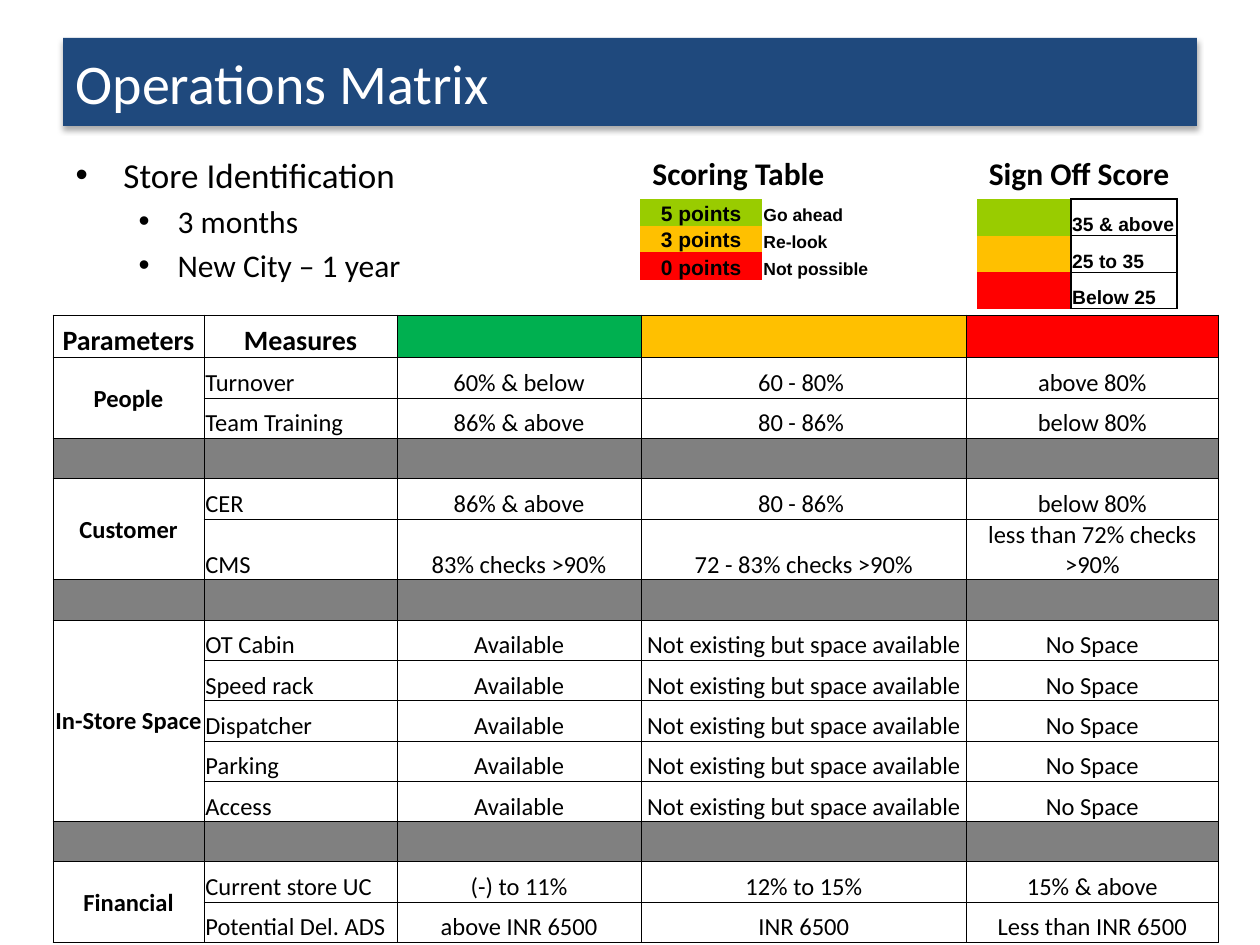
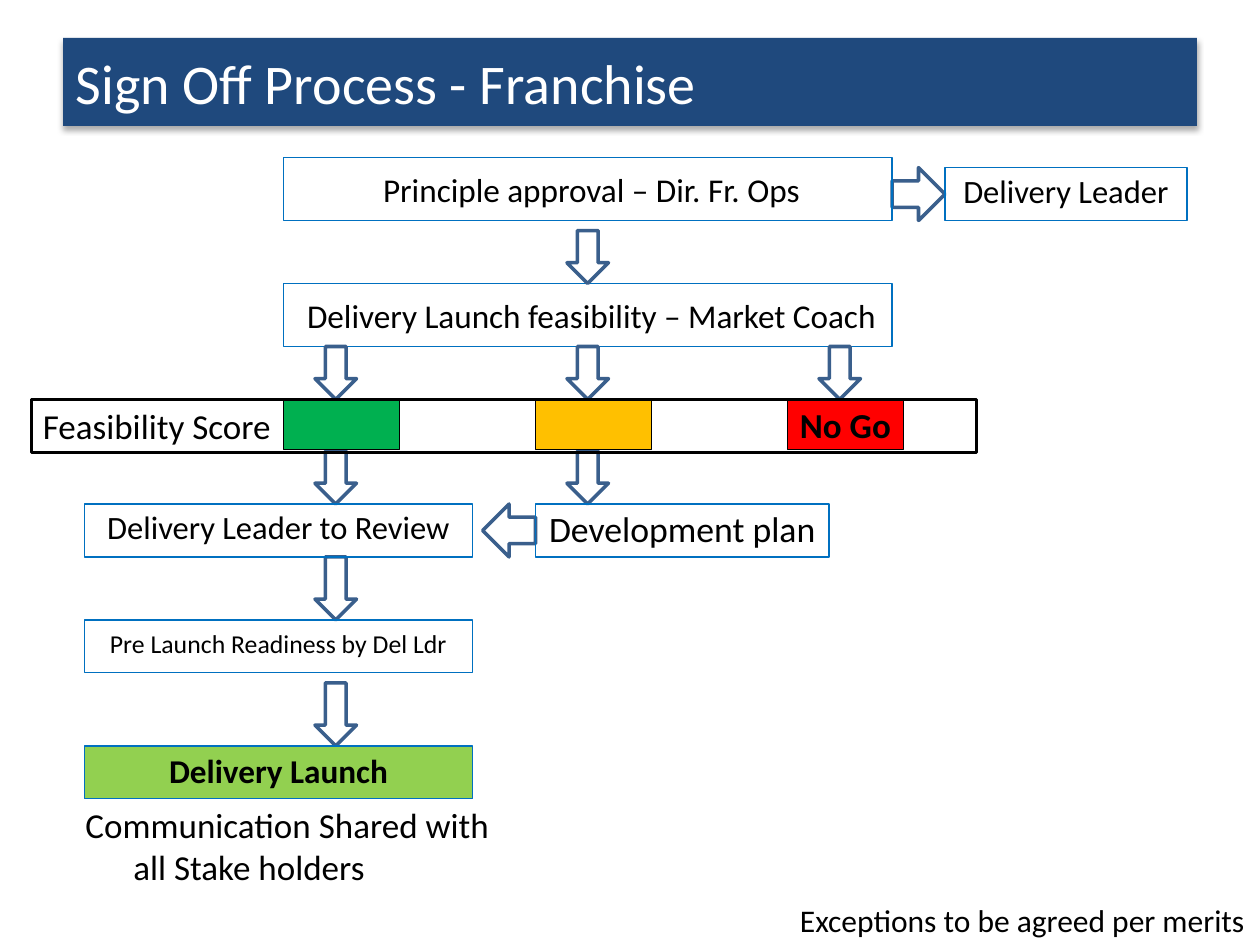
from lxml.etree import SubElement
from pptx import Presentation
from pptx.dml.color import RGBColor
from pptx.enum.shapes import MSO_SHAPE as Preset
from pptx.enum.text import MSO_ANCHOR as Anchor, MSO_AUTO_SIZE as AutoSize, PP_ALIGN as Align
from pptx.oxml.ns import qn
from pptx.util import Inches, Pt

NAVY, BLUE, STEEL = "1F497D", "0070C0", "3A5F8C"
GREEN, AMBER, RED = "00B050", "FFC000", "FF0000"
LIME, LIGHT_GREEN, GRAY = "99CC00", "92D050", "808080"
BLACK, WHITE = "000000", "FFFFFF"
NO_STYLE = "{2D5ABB26-0587-4C30-8999-92F81FD0307C}"


def paint(target, fill=None, line=None, width=0.75, borders=None):
    for side, weight in (borders or {}).items():
        border = SubElement(target._tc.get_or_add_tcPr(), qn(f"a:ln{side}"), w=str(Pt(weight)))
        SubElement(SubElement(border, qn("a:solidFill")), qn("a:srgbClr"), val=BLACK)
    if fill:
        target.fill.solid()
        target.fill.fore_color.rgb = RGBColor.from_string(fill)
    else:
        target.fill.background()
    if line:
        target.line.color.rgb = RGBColor.from_string(line)
        target.line.width = Pt(width)


def write(frame, text, size=18, font="Calibri", color=BLACK, bold=False, align=Align.LEFT,
          spacing=None, before=0, margin=0, hanging=0, level=0, bullet=None):
    paragraph = frame.add_paragraph() if frame.text else frame.paragraphs[0]
    paragraph.alignment, paragraph.level = align, level
    paragraph.space_before = Pt(before)
    if spacing:
        paragraph.line_spacing = spacing
    properties = paragraph._p.get_or_add_pPr()
    properties.set("marL", str(Inches(margin)))
    properties.set("indent", str(-Inches(hanging)))
    if bullet:
        SubElement(properties, qn("a:buChar"), char=bullet)
    else:
        SubElement(properties, qn("a:buNone"))
    run = paragraph.add_run()
    run.text = text
    run.font.size, run.font.name, run.font.bold = Pt(size), font, bold
    run.font.color.rgb = RGBColor.from_string(color)


presentation = Presentation()
presentation.slide_width, presentation.slide_height = Inches(10), Inches(7.5)

slides = []
for heading in ("Operations Matrix", "Sign Off Process - Franchise"):
    slide = presentation.slides.add_slide(presentation.slide_layouts[1])
    title = slide.shapes.title
    title.left, title.top, title.width, title.height = map(Inches, (0.5, 0.3, 9, 0.7))
    paint(title, NAVY)
    effects = SubElement(title._element.spPr, qn("a:effectLst"))
    shadow = SubElement(effects, qn("a:outerShdw"), blurRad=str(Pt(3.5)), dist=str(Pt(2.2)),
                        dir="5400000", rotWithShape="0")
    shadow_color = SubElement(shadow, qn("a:srgbClr"), val=BLACK)
    SubElement(shadow_color, qn("a:alpha"), val="32000")
    title.text_frame.auto_size = AutoSize.NONE
    title.text_frame.vertical_anchor = Anchor.MIDDLE
    write(title.text_frame, heading, size=32, color=WHITE)
    slides.append(slide)
matrix_slide, process_slide = slides

body = matrix_slide.placeholders[1]
body.left, body.top, body.width, body.height = map(Inches, (0.5, 1.17, 9, 1.58))
body.text_frame.auto_size = AutoSize.NONE
write(body.text_frame, "Store Identification", size=20, before=4, margin=0.38, hanging=0.38, bullet="•")
for period in ("3 months", "New City – 1 year"):
    write(body.text_frame, period, before=3.6, margin=0.81, hanging=0.31, level=1, bullet="•")

separator = ("",) * 5
space_levels = ("Available", "Not existing but space available", "No Space")
matrix_rows = [
    ("Parameters", "Measures", "", "", ""),
    ("People", "Turnover", "60% & below", "60 - 80% ", "above 80%"),
    ("", "Team Training", "86% & above", "80 - 86% ", "below 80%"),
    separator,
    ("Customer", "CER", "86% & above", "80 - 86% ", "below 80%"),
    ("", "CMS", "83% checks >90%", "72 - 83% checks >90%", "less than 72% checks >90%"),
    separator,
    ("In-Store Space", "OT Cabin", *space_levels),
    *[("", measure, *space_levels) for measure in ("Speed rack", "Dispatcher", "Parking", "Access")],
    separator,
    ("Financial", "Current store UC", "(-) to 11%", "12% to 15%", "15% & above"),
    ("", "Potential Del. ADS", "above INR 6500", "INR 6500", "Less than INR 6500"),
]
scoring_rows = [("5 points", "Go ahead"), ("3 points", "Re-look"), ("0 points", "Not possible")]
sign_off_rows = [("", "35 & above"), ("", "25 to 35"), ("", "Below 25")]
small_heights = [0.21, 0.21, 0.22]

tables = []
for left, top, widths, heights, rows in (
    (0.42, 2.5, [1.2, 1.53, 1.94, 2.58, 2], [0.34] + [0.32] * 14, matrix_rows),
    (5.08, 1.58, [0.97, 1.03], small_heights, scoring_rows),
    (7.75, 1.58, [0.75, 0.84], small_heights, sign_off_rows),
):
    table = matrix_slide.shapes.add_table(
        len(rows), len(widths), Inches(left), Inches(top),
        Inches(sum(widths)), Inches(sum(heights))).table
    table.first_row = table.horz_banding = False
    table._tbl.tblPr.find(qn("a:tableStyleId")).text = NO_STYLE
    for column, width in zip(table.columns, widths):
        column.width = Inches(width)
    for row, height in zip(table.rows, heights):
        row.height = Inches(height)
    for cell in table.iter_cells():
        cell.margin_left = cell.margin_right = cell.margin_top = Inches(0.01)
        cell.margin_bottom = 0
        cell.vertical_anchor = Anchor.BOTTOM
    tables.append(table)
matrix, scoring, sign_off = tables

for first, last in ((1, 2), (4, 5), (7, 11), (13, 14)):
    matrix.cell(first, 0).merge(matrix.cell(last, 0))
header_fills = (None, None, GREEN, AMBER, RED)
for r, row in enumerate(matrix_rows):
    for c, text in enumerate(row):
        cell = matrix.cell(r, c)
        fill = header_fills[c] if r == 0 else GRAY if row == separator else None
        paint(cell, fill, borders=dict.fromkeys("LRTB", 0.5))
        if r and c == 0:
            cell.vertical_anchor = Anchor.MIDDLE
        write(cell.text_frame, text, size=14 if r else 16, bold=r == 0 or c == 0,
              align=Align.LEFT if r and c == 1 else Align.CENTER)

for r, fill in enumerate((LIME, AMBER, RED)):
    points, verdict = scoring.cell(r, 0), scoring.cell(r, 1)
    paint(points, fill)
    paint(verdict)
    write(points.text_frame, scoring_rows[r][0], size=12, font="Arial", bold=True, align=Align.CENTER)
    write(verdict.text_frame, scoring_rows[r][1], size=10, font="Arial", bold=True)
    swatch, score = sign_off.cell(r, 0), sign_off.cell(r, 1)
    paint(swatch, fill, borders={"R": 1})
    paint(score, borders={"L": 1, "R": 1, "T": 0.5 if r else 1, "B": 1 if r == 2 else 0.5})
    write(swatch.text_frame, "", size=11, font="Arial")
    write(score.text_frame, sign_off_rows[r][1], size=11, font="Arial", bold=True)

for left, caption in ((5.08, "Scoring Table"), (7.75, "Sign Off Score")):
    label = matrix_slide.shapes.add_textbox(Inches(left), Inches(1.17), Inches(1.83), Inches(0.4))
    label.text_frame.word_wrap = True
    write(label.text_frame, caption, bold=True)

feasibility = process_slide.placeholders[1]
feasibility.left, feasibility.top, feasibility.width, feasibility.height = map(
    Inches, (2.25, 2.25, 4.83, 0.5))
paint(feasibility, line=BLUE)
feasibility.text_frame.auto_size = AutoSize.NONE
feasibility.text_frame.vertical_anchor = Anchor.MIDDLE
write(feasibility.text_frame, " Delivery Launch feasibility – Market Coach", size=19,
      align=Align.CENTER, before=3.8, margin=0.38, hanging=0.38)

for left, top, width, height, rotation in (
    (4.5, 1.83, 0.33, 0.42, 0),
    *[(left, 2.75, 0.33, 0.42, 0) for left in (2.5, 4.5, 6.5)],
    *[(left, 3.58, 0.33, 0.42, 0) for left in (2.5, 4.5)],
    *[(2.5, top, 0.33, 0.5, 0) for top in (4.42, 5.42)],
    (3.83, 4, 0.42, 0.42, 90),
    (7.08, 1.33, 0.42, 0.42, 270),
):
    arrow = process_slide.shapes.add_shape(
        Preset.DOWN_ARROW, Inches(left), Inches(top), Inches(width), Inches(height))
    arrow.shadow.inherit = False
    arrow.rotation = rotation
    paint(arrow, line=STEEL, width=2)

for text, left, top, width, height, fill, size, spacing in (
    (" Principle approval – Dir. Fr. Ops", 2.25, 1.25, 4.83, 0.5, None, 19, 1),
    ("Delivery Leader", 7.5, 1.33, 1.92, 0.42, None, 18.6, 0.8),
    ("Delivery Leader to Review", 0.67, 4, 3.08, 0.42, None, 18.6, 0.8),
    ("Development plan", 4.25, 4, 2.33, 0.42, None, 20.4, 0.9),
    ("Pre Launch Readiness by Del Ldr", 0.67, 4.92, 3.08, 0.42, None, 14.7, 0.8),
    ("Delivery Launch", 0.67, 5.92, 3.08, 0.42, LIGHT_GREEN, 19, 0.9),
):
    step = process_slide.shapes.add_shape(
        Preset.RECTANGLE, Inches(left), Inches(top), Inches(width), Inches(height))
    step.shadow.inherit = False
    paint(step, fill, BLUE)
    step.text_frame.vertical_anchor = Anchor.MIDDLE
    write(step.text_frame, text, size=size, bold=fill is not None, align=Align.CENTER,
          spacing=spacing, before=size * 0.2, margin=0.38, hanging=0.38)

for left, width, height, fill, line_width in (
    (2.25, 0.92, 0.4, GREEN, 0.75),
    (4.25, 0.92, 0.4, AMBER, 0.75),
    (6.25, 0.92, 0.4, RED, 0.75),
    (0.25, 7.5, 0.42, None, 2),
):
    score_box = process_slide.shapes.add_shape(
        Preset.RECTANGLE, Inches(left), Inches(3.17), Inches(width), Inches(height))
    score_box.shadow.inherit = False
    paint(score_box, fill, BLACK, line_width)

for text, left, top, width, height, wrap, style in (
    ("No Go", 6.25, 3.15, 1.08, 0.44, True, dict(size=20, bold=True)),
    ("Feasibility Score", 0.08, 3.17, 2.33, 0.42, True,
     dict(size=20, align=Align.CENTER, before=4, margin=0.38, hanging=0.38)),
    ("Communication Shared with all Stake holders", 0.58, 6.5, 3.67, 0.42, True,
     dict(size=20, before=4, margin=0.38, hanging=0.38)),
    ("Exceptions to be agreed per merits", 6.25, 7.1, 3.75, 0.4, False, dict(size=18)),
):
    note = process_slide.shapes.add_textbox(Inches(left), Inches(top), Inches(width), Inches(height))
    note.text_frame.word_wrap = wrap
    note.text_frame.vertical_anchor = Anchor.MIDDLE
    write(note.text_frame, text, **style)

presentation.save("out.pptx")
